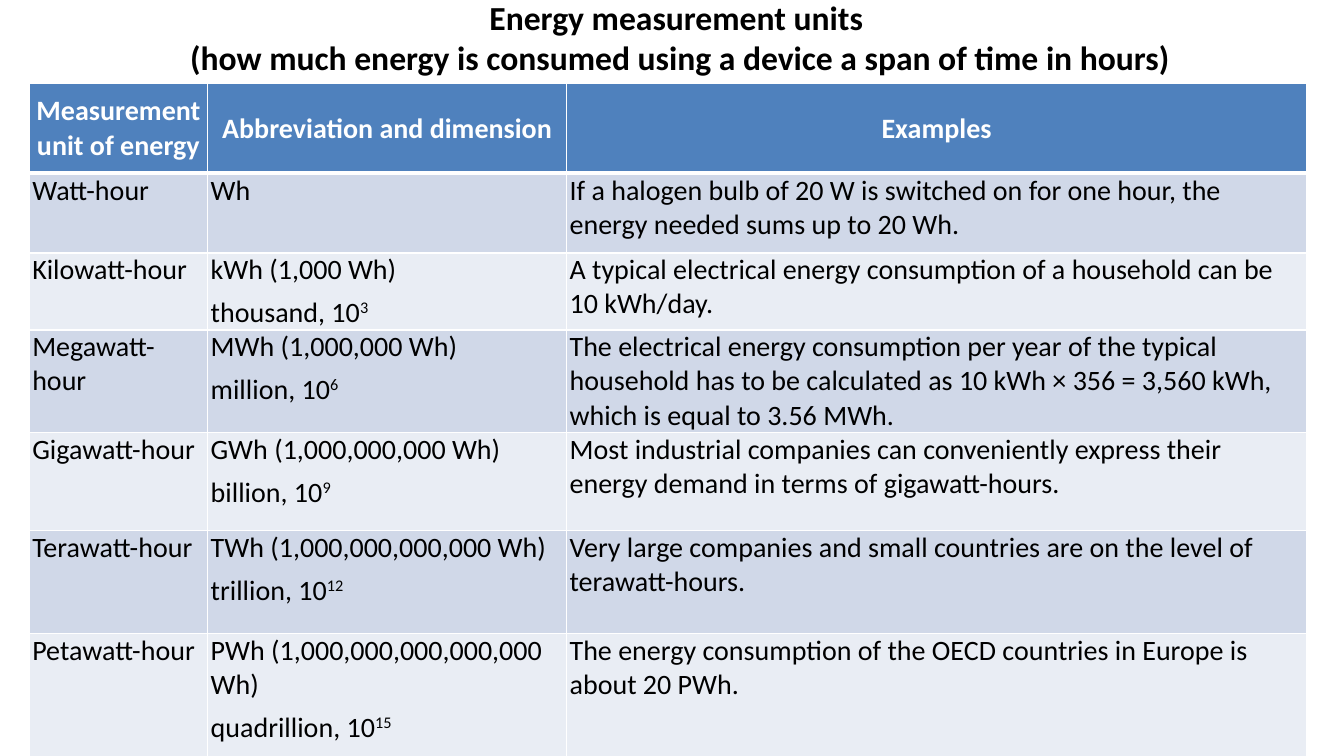
from lxml.etree import SubElement
from pptx import Presentation
from pptx.dml.color import RGBColor
from pptx.enum.text import MSO_ANCHOR, PP_ALIGN
from pptx.oxml.ns import qn
from pptx.util import Inches, Pt

COLORS = {"header": "4F81BD", "odd": "D0D8E8", "even": "E9EDF4",
          "border": "FFFFFF", "header_text": "FFFFFF", "text": "000000"}
FONT = "Calibri"

TITLE = ("Energy measurement units \v"
         "(how much energy is consumed using a device a span of time in hours)")
HEADINGS = ["Measurement unit of energy", "Abbreviation and dimension", "Examples"]
# unit, abbreviation, name of the power of ten, exponent, example
UNITS = [
    ("Watt-hour", "Wh", None, None,
     "If a halogen bulb of 20 W is switched on for one hour, the energy needed "
     "sums up to 20 Wh."),
    ("Kilowatt-hour", "kWh (1,000 Wh)", "thousand", 3,
     "A typical electrical energy consumption of a household can be 10 kWh/day."),
    ("Megawatt-hour", "MWh (1,000,000 Wh)", "million", 6,
     "The electrical energy consumption per year of the typical household has to be "
     "calculated as 10 kWh × 356 = 3,560 kWh, which is equal to 3.56 MWh."),
    ("Gigawatt-hour", "GWh (1,000,000,000 Wh)", "billion", 9,
     "Most industrial companies can conveniently express their energy demand in "
     "terms of gigawatt-hours."),
    ("Terawatt-hour", "TWh (1,000,000,000,000 Wh)", "trillion", 12,
     "Very large companies and small countries are on the level of terawatt-hours."),
    ("Petawatt-hour", "PWh (1,000,000,000,000,000 Wh)", "quadrillion", 15,
     "The energy consumption of the OECD countries in Europe is about 20 PWh."),
]
COLUMN_WIDTHS = [1.77, 3.56, 7.34]
ROW_HEIGHTS = [0.89, 0.79, 0.76, 1, 0.97, 1.02, 1.26]


def format_runs(paragraph, size, color, bold):
    for run in paragraph.runs:
        run.font.name = FONT
        run.font.size = Pt(size)
        run.font.bold = bold
        run.font.color.rgb = RGBColor.from_string(COLORS[color])


def set_borders(cell, top, bottom):
    """Draw the cell's borders, 1 pt at the sides, top and bottom in points."""
    properties = cell._tc.get_or_add_tcPr()
    for side, width in (("L", 1), ("R", 1), ("T", top), ("B", bottom)):
        line = SubElement(properties, qn(f"a:ln{side}"), w=str(Pt(width)))
        fill = SubElement(line, qn("a:solidFill"))
        SubElement(fill, qn("a:srgbClr"), val=COLORS["border"])


def add_exponent(paragraph, exponent):
    run = paragraph.add_run()
    run.text = str(exponent)
    run._r.get_or_add_rPr().set("baseline", "30000")


def style_cell(cell, row):
    is_header = row == 0
    set_borders(cell, top=3 if row == 1 else 1, bottom=3 if is_header else 1)
    band = "header" if is_header else ("odd" if row % 2 else "even")
    cell.fill.solid()
    cell.fill.fore_color.rgb = RGBColor.from_string(COLORS[band])
    cell.margin_left = cell.margin_right = Inches(0.03)
    cell.margin_top = cell.margin_bottom = 0
    cell.vertical_anchor = MSO_ANCHOR.MIDDLE if is_header else MSO_ANCHOR.TOP
    for paragraph in cell.text_frame.paragraphs:
        paragraph.alignment = PP_ALIGN.CENTER if is_header else PP_ALIGN.LEFT
        paragraph.space_after = Pt(6)
        format_runs(paragraph, 20, "header_text" if is_header else "text", is_header)


def place_title(slide, left, top, width, height):
    title = slide.shapes.title
    title.left, title.top = Inches(left), Inches(top)
    title.width, title.height = Inches(width), Inches(height)
    frame = title.text_frame
    frame.text = TITLE
    frame.word_wrap = True
    frame.vertical_anchor = MSO_ANCHOR.MIDDLE
    heading = frame.paragraphs[0]
    heading.alignment = PP_ALIGN.CENTER
    format_runs(heading, 24, "text", True)


def add_units_table(slide, left, top):
    units = slide.shapes.add_table(
        len(ROW_HEIGHTS), len(COLUMN_WIDTHS), Inches(left), Inches(top),
        Inches(sum(COLUMN_WIDTHS)), Inches(sum(ROW_HEIGHTS))).table
    for column, width in zip(units.columns, COLUMN_WIDTHS):
        column.width = Inches(width)
    for row, height in zip(units.rows, ROW_HEIGHTS):
        row.height = Inches(height)

    for column, heading in enumerate(HEADINGS):
        units.cell(0, column).text_frame.text = heading
    for row, (unit, abbreviation, power, exponent, example) in enumerate(UNITS, 1):
        units.cell(row, 0).text_frame.text = unit
        dimension = units.cell(row, 1).text_frame
        dimension.text = abbreviation
        if power:
            power_line = dimension.add_paragraph()
            power_line.text = f"{power}, 10"
            add_exponent(power_line, exponent)
        units.cell(row, 2).text_frame.text = example

    for row in range(len(ROW_HEIGHTS)):
        for column in range(len(COLUMN_WIDTHS)):
            style_cell(units.cell(row, column), row)


def main():
    deck = Presentation()
    deck.slide_width, deck.slide_height = Inches(13.33), Inches(7.5)
    slide = deck.slides.add_slide(deck.slide_layouts[5])
    add_units_table(slide, 0.29, 0.83)
    place_title(slide, 1.67, 0, 10.15, 0.74)
    deck.save("out.pptx")


if __name__ == "__main__":
    main()
